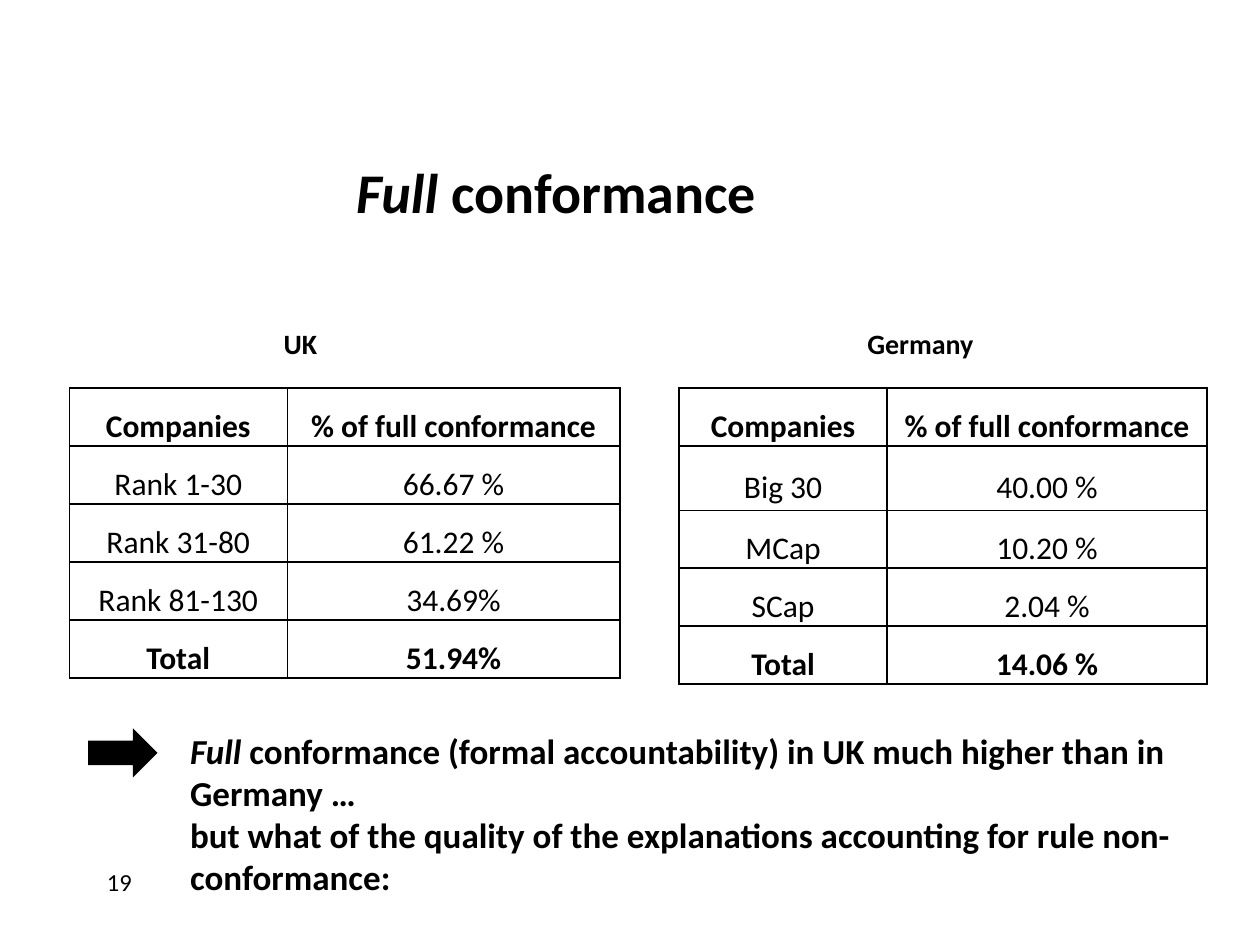
from lxml import etree
from pptx import Presentation
from pptx.dml.color import RGBColor
from pptx.enum import shapes, text
from pptx.oxml import ns
from pptx.util import Inches, Pt

FONT = "Calibri"
BLACK = "000000"
HEADER = ("Companies", "% of full conformance")
UK_ROWS = [
    HEADER,
    ("Rank 1-30", "66.67 %"),
    ("Rank 31-80", "61.22 %"),
    ("Rank 81-130", "34.69%"),
    ("Total", "51.94%"),
]
GERMANY_ROWS = [
    HEADER,
    ("Big 30", "40.00 %"),
    ("MCap", "10.20 %"),
    ("SCap", "2.04 %"),
    ("Total", "14.06 %"),
]


def color(value):
    return RGBColor.from_string(value)


def style_paragraph(paragraph, size, bold, align):
    paragraph.alignment = align
    font = paragraph.font
    font.name, font.size, font.bold = FONT, Pt(size), bold
    font.color.rgb = color(BLACK)


def add_text(slide, box, paragraphs, size, bold=True,
             align=text.PP_ALIGN.LEFT, anchor=text.MSO_ANCHOR.TOP):
    """Add a text box; each paragraph is a list of (text, italic) runs."""
    shape = slide.shapes.add_textbox(*map(Inches, box))
    frame = shape.text_frame
    frame.word_wrap = True
    frame.vertical_anchor = anchor
    for index, runs in enumerate(paragraphs):
        paragraph = frame.add_paragraph() if index else frame.paragraphs[0]
        style_paragraph(paragraph, size, bold, align)
        for words, italic in runs:
            run = paragraph.add_run()
            run.text = words
            if italic:
                run.font.italic = True


def add_borders(cell):
    properties = cell._tc.get_or_add_tcPr()
    for side in ("lnL", "lnR", "lnT", "lnB"):
        line = etree.SubElement(properties, ns.qn(f"a:{side}"), w=str(Pt(1)))
        fill = etree.SubElement(line, ns.qn("a:solidFill"))
        etree.SubElement(fill, ns.qn("a:srgbClr"), val=BLACK)


def fill_cell(cell, words, bold):
    cell.margin_left = cell.margin_right = Inches(0.07)
    cell.margin_top = cell.margin_bottom = 0
    cell.vertical_anchor = text.MSO_ANCHOR.MIDDLE
    cell.text = words
    paragraph = cell.text_frame.paragraphs[0]
    paragraph.line_spacing = 1.5
    style_paragraph(paragraph, 18, bold, text.PP_ALIGN.CENTER)
    add_borders(cell)
    cell.fill.background()


def add_table(slide, left, widths, heights, rows):
    frame = slide.shapes.add_table(
        len(rows), len(widths), Inches(left), Inches(3.08),
        Inches(sum(widths)), Inches(sum(heights)))
    table = frame.table
    table.first_row = table.horz_banding = False
    for column, width in zip(table.columns, widths):
        column.width = Inches(width)
    for row, height, values in zip(table.rows, heights, rows):
        row.height = Inches(height)
        for cell, words in zip(row.cells, values):
            fill_cell(cell, words, values[0] in ("Companies", "Total"))


def add_arrow(slide, box):
    arrow = slide.shapes.add_shape(
        shapes.MSO_SHAPE.RIGHT_ARROW, *map(Inches, box))
    arrow.shadow.inherit = False
    arrow.fill.solid()
    arrow.fill.fore_color.rgb = color(BLACK)
    arrow.line.fill.background()


def main():
    presentation = Presentation()
    presentation.slide_width = Inches(10)
    presentation.slide_height = Inches(7.5)
    slide = presentation.slides.add_slide(presentation.slide_layouts[6])
    center = text.PP_ALIGN.CENTER

    add_text(slide, (0.78, 1.17, 7.27, 0.7),
             [[("Full", True), (" conformance", False)]], 32,
             align=center, anchor=text.MSO_ANCHOR.MIDDLE)
    add_text(slide, (0.75, 6.83, 2.08, 0.5), [[("19", False)]], 14, bold=False)

    add_table(slide, 0.55, (1.73, 2.64), [0.46] * 5, UK_ROWS)
    add_table(slide, 5.39, (1.65, 2.54), [0.46, 0.51] + [0.46] * 3,
              GERMANY_ROWS)
    for left, country in ((1.41, "UK"), (6.33, "Germany")):
        add_text(slide, (left, 2.54, 1.95, 0.37), [[(country, False)]], 16,
                 align=center)

    add_arrow(slide, (0.7, 5.78, 0.55, 0.39))
    add_text(slide, (1.41, 5.74, 8.09, 1.45), [
        [("Full", True),
         (" conformance (formal accountability) in UK much higher than in "
          "Germany …", False)],
        [("but what of the quality of the explanations accounting for rule "
          "non-conformance:", False)],
    ], 20)
    presentation.save("out.pptx")


if __name__ == "__main__":
    main()
